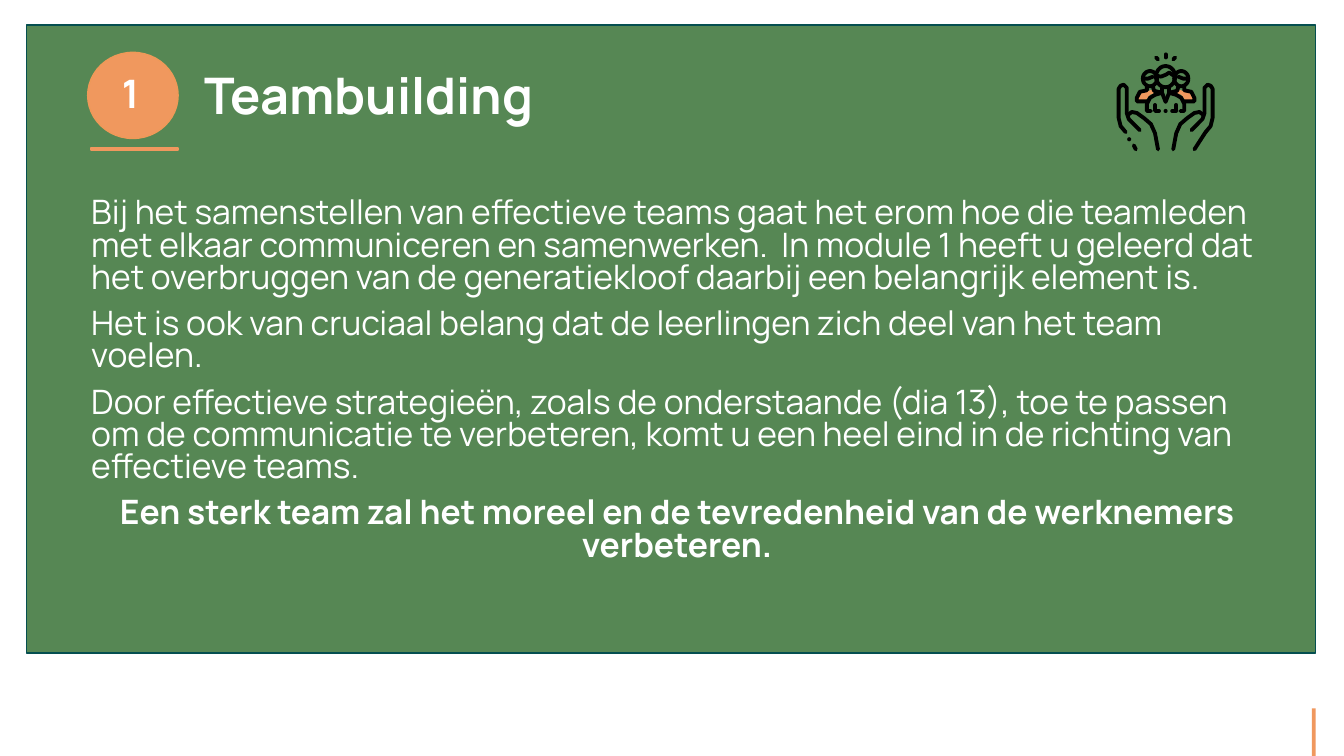
import math

from lxml import etree
from pptx import Presentation
from pptx import util as u
from pptx.dml.color import RGBColor
from pptx.enum import shapes, text
from pptx.oxml import ns

GREEN, ORANGE, TEAL, WHITE, BLACK = "568754", "F0985E", "054F50", "FFFFFF", "000000"
ICON_UNITS = 97
STEPS = 10

HAND = [
    [(9, 79), (4, 73), (2, 65), (2, 36), (4, 33), (7, 32), (10, 35), (10, 60), (12, 66), (23, 77)],
    [(11, 62), (15, 59), (20, 60), (27, 65), (34, 71), (38, 80), (41, 96)],
]
SIDE_PERSON = [
    [(30, 48.5), (20, 48.5), (20, 45), (23, 39), (30, 37.5), (30, 34)],
    [(36, 34), (37, 38), (45, 40)],
    [(26, 26), (31, 26), (36, 24)],
]
BODY_HALF = [
    [(34, 58), (30, 58), (30, 51), (33, 45), (38, 42), (45, 40), (48.5, 49)],
    [(38, 52), (38, 58), (42, 58)],
    [(45, 36), (45, 40)],
]
SHOULDER_FILL = [(21, 47), (21, 45), (25, 40), (30, 39), (34, 37), (38, 40), (33, 42), (29, 47)]
SIDE_RAY = [(39, 5), (41, 7)]
FRINGE = [(39, 23), (44, 24), (49, 22), (52, 20), (58, 24)]


def color(hex_code):
    """Return the colour for a hex string."""
    return RGBColor.from_string(hex_code)


def paint(part, fill=None, line=None, weight=1):
    """Set fill and outline, and drop the shadow."""
    part.shadow.inherit = False
    if fill:
        part.fill.solid()
        part.fill.fore_color.rgb = color(fill)
    else:
        part.fill.background()
    if line:
        part.line.color.rgb = color(line)
        part.line.width = u.Pt(weight)
    else:
        part.line.fill.background()
    return part


def add_block(slide, kind, box, fill=None, line=None):
    """Add a preset shape in a box given in centimetres."""
    return paint(slide.shapes.add_shape(kind, *map(u.Cm, box)), fill, line)


def add_run(paragraph, words, size, bold=False):
    """Add one white run."""
    run = paragraph.add_run()
    run.text = words
    run.font.name = "Manrope"
    run.font.size = u.Pt(size)
    run.font.bold = bold
    run.font.color.rgb = color(WHITE)


def add_paragraphs(slide, box, entries, size, spacing):
    """Add a text box with one paragraph per (words, bold, alignment)."""
    frame = slide.shapes.add_textbox(*map(u.Cm, box)).text_frame
    frame.word_wrap = True
    for index, (words, bold, alignment) in enumerate(entries):
        paragraph = frame.paragraphs[0] if index == 0 else frame.add_paragraph()
        paragraph.alignment = alignment
        paragraph.line_spacing = spacing
        if index:
            paragraph.space_before = u.Pt(10)
        add_run(paragraph, words, size, bold)


def round_ends(stroke):
    """Give a line round caps and joins."""
    line = stroke.line._get_or_add_ln()
    line.set("cap", "rnd")
    etree.SubElement(line, ns.qn("a:round"))


def add_outline(slide, box, paths, fill=None):
    """Draw paths in icon units, filled or as one black stroke."""
    left, top, side = box
    fine = [[(x * STEPS, y * STEPS) for x, y in points] for points in paths]
    outline = slide.shapes.build_freeform(*fine[0][0], scale=u.Cm(side) / ICON_UNITS / STEPS)
    outline.add_line_segments(fine[0][1:], close=bool(fill))
    for points in fine[1:]:
        outline.move_to(*points[0])
        outline.add_line_segments(points[1:], close=False)
    part = outline.convert_to_shape(u.Cm(left), u.Cm(top))
    paint(part, fill, None if fill else BLACK, 2.75)
    if not fill:
        round_ends(part)


def add_dash(slide, box, points):
    """Draw a straight black dash in icon units."""
    left, top, side = box
    ends = [u.Cm(start + side / ICON_UNITS * value)
            for point in points for start, value in zip((left, top), point)]
    dash = slide.shapes.add_connector(shapes.MSO_CONNECTOR.STRAIGHT, *ends)
    dash.line.color.rgb = color(BLACK)
    dash.line.width = u.Pt(2.75)
    etree.SubElement(dash._element.spPr, ns.qn("a:effectLst"))
    round_ends(dash)


def add_dot(slide, box, center):
    """Draw a black dot in icon units."""
    left, top, side = box
    unit = side / ICON_UNITS
    add_block(slide, shapes.MSO_SHAPE.OVAL, (left + unit * (center[0] - 2),
              top + unit * (center[1] - 2), unit * 4, unit * 4), BLACK)


def head(x, y, across, down):
    """Return a closed ring of points around a centre."""
    angles = [math.tau * step / 36 for step in range(37)]
    return [(x + across * math.cos(a), y + down * math.sin(a)) for a in angles]


def mirror(points):
    """Reflect points across the icon's vertical axis."""
    return [(ICON_UNITS - x, y) for x, y in points]


def add_team_icon(slide, box):
    """Draw two hands holding a team of three."""
    half_team = SIDE_PERSON + BODY_HALF + [head(33, 26, 7, 7.5)]
    team = [head(48.5, 24, 9.5, 10.5), FRINGE]
    for turn in (list, mirror):
        add_outline(slide, box, [turn(SHOULDER_FILL)], ORANGE)
        add_outline(slide, box, [turn(points) for points in HAND])
        add_dash(slide, box, turn(SIDE_RAY))
        team += [turn(points) for points in half_team]
    add_outline(slide, box, team)
    for dash in ([(48.5, 2), (48.5, 5)], [(17, 92), (19, 96)], mirror([(9, 79), (20, 96)])):
        add_dash(slide, box, dash)
    for dot in ((12.5, 86), (48.5, 58)):
        add_dot(slide, box, dot)


def add_heading(slide, box):
    """Place the numbered badge, its underline, the title and the icon."""
    left, top, width = box
    badge = add_block(slide, shapes.MSO_SHAPE.FLOWCHART_CONNECTOR,
                      (left, top, 2.28, 2.17), ORANGE, "EF9958")
    frame = badge.text_frame
    frame.margin_left, frame.margin_right = 0, u.Cm(0.12)
    frame.vertical_anchor = text.MSO_ANCHOR.MIDDLE
    number = frame.paragraphs[0]
    number.alignment = text.PP_ALIGN.CENTER
    number.line_spacing = 0.9
    add_run(number, "1", 28, True)
    add_block(slide, shapes.MSO_SHAPE.RECTANGLE, (left + 0.08, top + 2.41, 2.2, 0.05),
              ORANGE, ORANGE)
    add_paragraphs(slide, (left + 2.69, top + 0.46, 27.15, 1.63),
                   [("Teambuilding", True, text.PP_ALIGN.LEFT)], 36, 0.8)
    add_team_icon(slide, (left + width - 2.47, top, 2.47))


def add_explanation(slide, box):
    """Place the body paragraphs and the bold conclusion."""
    left, center = text.PP_ALIGN.LEFT, text.PP_ALIGN.CENTER
    add_paragraphs(slide, box, [
        ("Bij het samenstellen van effectieve teams gaat het erom hoe die teamleden met elkaar "
         "communiceren en samenwerken.  In module 1 heeft u geleerd dat het overbruggen van de "
         "generatiekloof daarbij een belangrijk element is.", False, left),
        ("Het is ook van cruciaal belang dat de leerlingen zich deel van het team voelen.",
         False, left),
        ("Door effectieve strategieën, zoals de onderstaande (dia 13), toe te passen om de "
         "communicatie te verbeteren, komt u een heel eind in de richting van effectieve teams.",
         False, left),
        ("Een sterk team zal het moreel en de tevredenheid van de werknemers verbeteren.",
         True, center),
    ], 24, 0.8)


def add_module_slide(deck):
    """Build the module slide."""
    slide = deck.slides.add_slide(deck.slide_layouts[6])
    rectangle = shapes.MSO_SHAPE.RECTANGLE
    add_block(slide, rectangle, (0.67, 0.63, 32.49, 15.83), GREEN, TEAL)
    add_block(slide, rectangle, (33.06, 17.85, 0.1, 1.2), ORANGE)
    add_explanation(slide, (2.05, 4.89, 30.02, 10.74))
    add_heading(slide, (2.21, 1.32, 28.4))


def main():
    """Create and save the deck."""
    deck = Presentation()
    deck.slide_width, deck.slide_height = u.Cm(33.87), u.Cm(19.05)
    add_module_slide(deck)
    deck.save("out.pptx")


if __name__ == "__main__":
    main()
